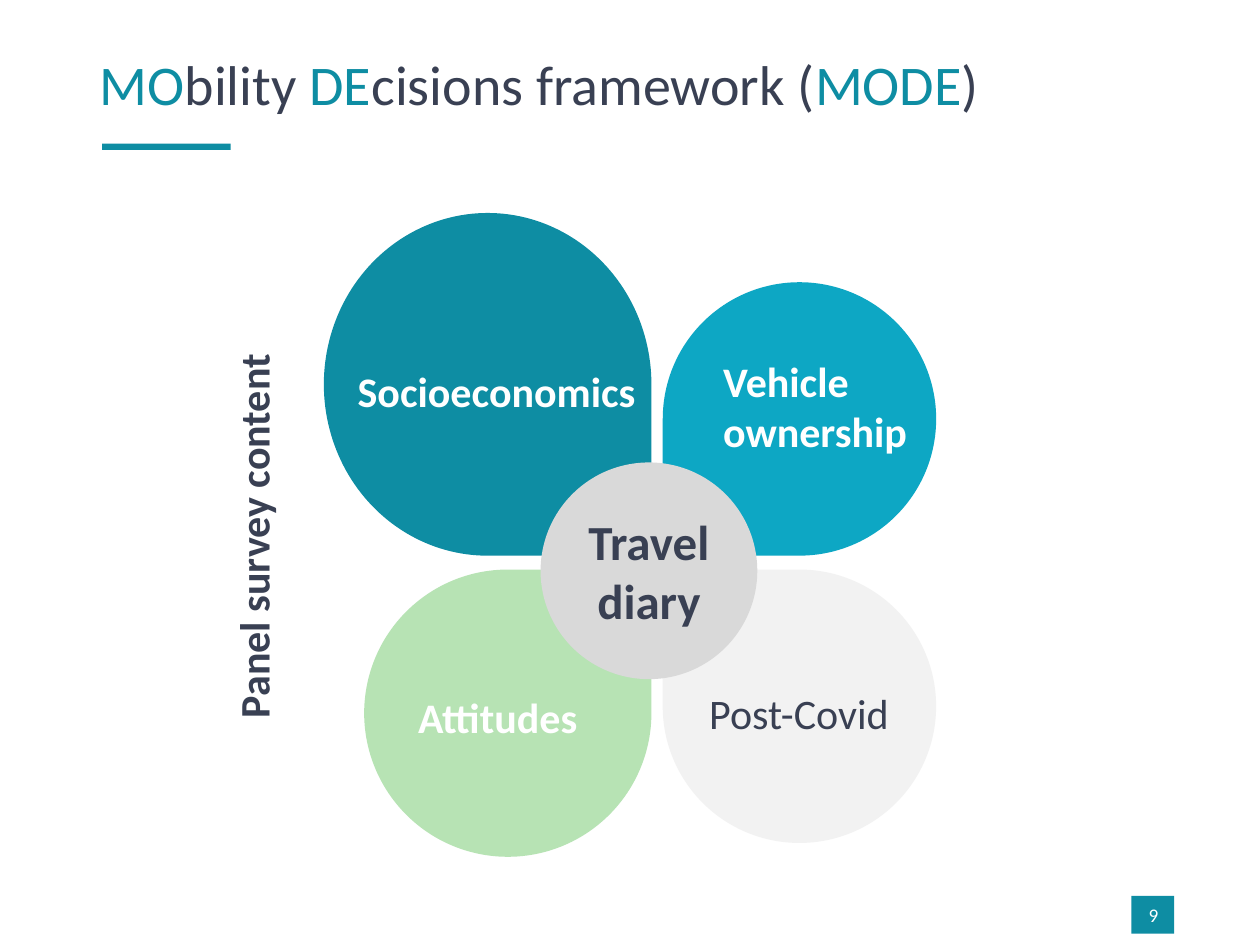
from typing import NamedTuple

from lxml import etree
from pptx import Presentation
from pptx.dml.color import RGBColor
from pptx.enum.shapes import MSO_SHAPE
from pptx.enum.text import MSO_ANCHOR, MSO_AUTO_SIZE, PP_ALIGN
from pptx.oxml.ns import qn
from pptx.util import Inches, Pt

RECTANGLE, TEARDROP, OVAL = MSO_SHAPE.RECTANGLE, MSO_SHAPE.TEAR, MSO_SHAPE.OVAL
LEFT, CENTER = PP_ALIGN.LEFT, PP_ALIGN.CENTER
TOP, MIDDLE = MSO_ANCHOR.TOP, MSO_ANCHOR.MIDDLE
GROW, NO_FIT = MSO_AUTO_SIZE.SHAPE_TO_FIT_TEXT, MSO_AUTO_SIZE.NONE

FONT = "Calibri"
TEAL, NAVY, WHITE = "0E8DA3", "394053", "FFFFFF"


class Area(NamedTuple):
    left: float
    top: float
    width: float
    height: float


class Petal(NamedTuple):
    label: str
    area: Area
    rotation: int
    fill: str
    label_area: Area
    color: str = WHITE
    bold: bool = True


PETALS = [
    Petal("Attitudes", Area(2.89, 4.52, 2.28, 2.28), 0, "B7E3B4",
          Area(3.22, 5.44, 1.71, 0.5)),
    Petal("Post-Covid", Area(5.26, 4.52, 2.17, 2.17), 270, "F2F2F2",
          Area(5.53, 5.41, 1.85, 0.5), NAVY, False),
    Petal("Socioeconomics", Area(2.51, 1.75, 2.72, 2.6), 90, TEAL,
          Area(2.74, 2.85, 2.42, 0.5)),
    Petal("Vehicle ownership", Area(5.26, 2.24, 2.17, 2.17), 180, "0DA7C4",
          Area(5.64, 2.77, 1.79, 0.91)),
]
TITLE_SPANS = [("MO", TEAL), ("bility ", NAVY), ("DE", TEAL),
               ("cisions framework (", NAVY), ("MODE", TEAL), (")", NAVY)]


def rgb(color: str) -> RGBColor:
    return RGBColor.from_string(color)


def lengths(area: Area) -> list:
    return [Inches(value) for value in area]


def place(shape, area: Area) -> None:
    shape.left, shape.top, shape.width, shape.height = lengths(area)


def style(para, size: float, color: str, bold: bool = False, align=LEFT) -> None:
    para.alignment = align
    para.font.name, para.font.size, para.font.bold = FONT, Pt(size), bold
    para.font.color.rgb = rgb(color)


def add_shape(slide, kind, area: Area, fill: str, rotation: int = 0):
    shape = slide.shapes.add_shape(kind, *lengths(area))
    shape.shadow.inherit = False
    shape.fill.solid()
    shape.fill.fore_color.rgb = rgb(fill)
    shape.line.fill.background()
    shape.rotation = rotation
    return shape


def add_label(slide, area: Area, text: str, size: float, color: str,
              bold: bool = False, align=LEFT):
    box = slide.shapes.add_textbox(*lengths(area))
    frame = box.text_frame
    frame.word_wrap = True
    frame.text = text
    style(frame.paragraphs[0], size, color, bold, align)
    return frame


def fill_title(title) -> None:
    place(title, Area(0.69, 0.4, 8.62, 0.69))
    frame = title.text_frame
    frame.auto_size, frame.vertical_anchor = NO_FIT, TOP
    para = frame.paragraphs[0]
    para.line_spacing = 0.9
    style(para, 32, NAVY)
    for text, color in TITLE_SPANS:
        span = para.add_run()
        span.text = text
        span.font.color.rgb = rgb(color)


def fill_side_heading(body) -> None:
    place(body, Area(-0.55, 3.95, 5.11, 0.61))
    body.rotation = 270
    frame = body.text_frame
    frame.auto_size, frame.vertical_anchor = NO_FIT, TOP
    frame.text = "Panel survey content"
    para = frame.paragraphs[0]
    properties = para._p.get_or_add_pPr()
    properties.set("marL", "0")
    properties.set("indent", "0")
    etree.SubElement(properties, qn("a:buNone"))
    para.line_spacing, para.space_before, para.space_after = 1.14, Pt(0), Pt(8)
    style(para, 24, NAVY, True, CENTER)


def main() -> None:
    deck = Presentation()
    deck.slide_width, deck.slide_height = Inches(10), Inches(7.5)
    slide = deck.slides.add_slide(deck.slide_layouts[1])

    # Page number and title rule
    add_shape(slide, RECTANGLE, Area(8.98, 7.11, 0.34, 0.3), TEAL)
    add_shape(slide, RECTANGLE, Area(0.81, 1.14, 1.02, 0.05), TEAL)
    number = add_label(slide, Area(8.84, 7.14, 0.63, 0.24), "9", 11, WHITE, align=CENTER)
    number.vertical_anchor = MIDDLE
    number.margin_left = number.margin_right = Inches(0.2)
    number.margin_top = number.margin_bottom = 0

    # Title and side heading
    fill_title(slide.shapes.title)
    fill_side_heading(slide.placeholders[1])

    # Petals first, then their labels
    for petal in PETALS:
        add_shape(slide, TEARDROP, petal.area, petal.fill, petal.rotation)
    for petal in PETALS:
        frame = add_label(slide, petal.label_area, petal.label, 24, petal.color, petal.bold)
        frame.auto_size = GROW

    # Centre of the flower
    diary = add_shape(slide, OVAL, Area(4.29, 3.67, 1.72, 1.72), "D9D9D9")
    diary.text_frame.text = "Travel diary"
    diary.text_frame.vertical_anchor = MIDDLE
    style(diary.text_frame.paragraphs[0], 28, NAVY, True, CENTER)

    deck.save("out.pptx")


if __name__ == "__main__":
    main()
